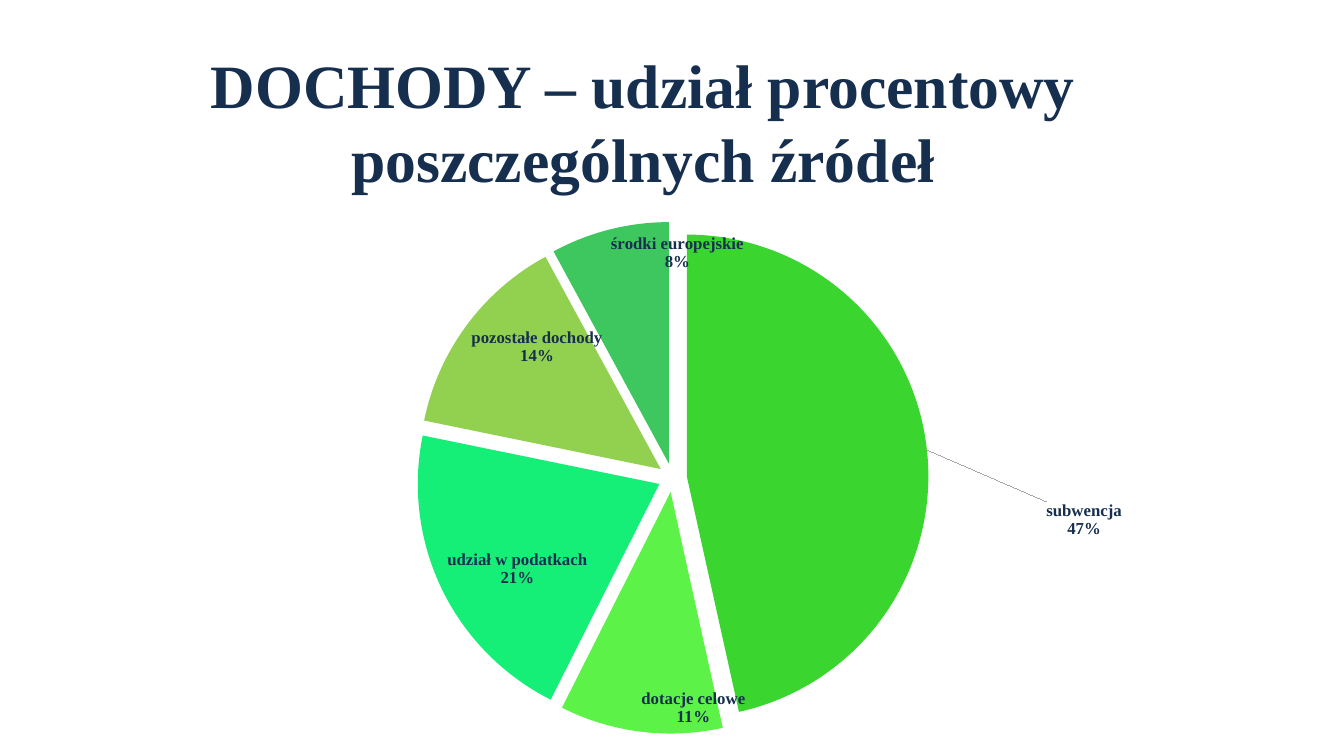
from copy import deepcopy
from dataclasses import dataclass

from lxml.etree import SubElement
from pptx import Presentation
from pptx.chart.data import CategoryChartData
from pptx.dml.color import RGBColor
from pptx.enum.chart import XL_CHART_TYPE as ChartType, XL_LABEL_POSITION as LabelPos
from pptx.enum.text import MSO_ANCHOR as Anchor, MSO_AUTO_SIZE as AutoSize, PP_ALIGN as Align
from pptx.oxml.ns import qn
from pptx.util import Inches, Pt

INCOME = [
    ("subwencja", 47, "3BD52F"),
    ("dotacje celowe", 11, "5CF248"),
    ("udział w podatkach", 21, "15EF78"),
    ("pozostałe dochody", 14, "92D050"),
    ("środki europejskie", 8, "3DC75E"),
]
# Category index: label shift as shares of the chart's size
LABEL_SHIFTS = {0: (0.22, 0.1)}


@dataclass(frozen=True)
class Theme:
    ink: str = "162F4E"
    leader: str = "A6A6A6"
    font: str = "Times New Roman"
    chart_font: str = "Calibri"
    title_size: int = 44
    label_size: int = 12
    chart_size: int = 10


def add_layout(parent, **values):
    """Append a manual chart layout holding the given settings."""
    manual = SubElement(SubElement(parent, qn("c:layout")), qn("c:manualLayout"))
    for name, value in values.items():
        SubElement(manual, qn(f"c:{name}")).set("val", str(value))
    return manual.getparent()


class SlideBuilder:
    def __init__(self, prs, theme):
        self.prs, self.theme = prs, theme
        self.s = prs.slides.add_slide(prs.slide_layouts[5])

    def box(self, left, top, width, height):
        """Turn percentages of the slide's size into lengths."""
        w, h = self.prs.slide_width, self.prs.slide_height
        return [int(share * size / 100)
                for share, size in zip((left, top, width, height), (w, h, w, h))]

    def style(self, font, size):
        font.name, font.size, font.bold = self.theme.font, Pt(size), True
        font.color.rgb = RGBColor.from_string(self.theme.ink)

    def title(self, text, *area):
        sp = self.s.shapes.title
        sp.left, sp.top, sp.width, sp.height = self.box(*area)
        tf = sp.text_frame
        tf.text = text
        tf.word_wrap, tf.auto_size = True, AutoSize.NONE
        tf.vertical_anchor = Anchor.TOP
        p = tf.paragraphs[0]
        p.alignment, p.line_spacing, p.space_after = Align.CENTER, 1.0, Pt(6)
        self.style(p.font, self.theme.title_size)

    def pie(self, rows, shifts, explosion, *area):
        names, values, colors = zip(*rows)
        data = CategoryChartData()
        data.categories = names
        data.add_series("Series 1", values)
        chart = self.s.shapes.add_chart(ChartType.PIE, *self.box(*area), data).chart
        chart.has_legend = chart.has_title = False
        chart.font.name = self.theme.chart_font
        chart.font.size = Pt(self.theme.chart_size)
        plot = chart.plots[0]
        plot.vary_by_categories = True
        self.fill_plot_area(chart)

        series = plot.series[0]
        burst = SubElement(series._element, qn("c:explosion"))
        burst.set("val", str(explosion))
        series._element.find(qn("c:tx")).addnext(burst)
        for i, color in enumerate(colors):
            fill = series.points[i].format.fill
            fill.solid()
            fill.fore_color.rgb = RGBColor.from_string(color)
        self.pie_labels(series.data_labels, shifts)

    def fill_plot_area(self, chart):
        plot_area = chart._chartSpace.chart.plotArea
        for old in plot_area.findall(qn("c:layout")):
            plot_area.remove(old)
        plot_area.insert(0, add_layout(
            plot_area, layoutTarget="inner", xMode="edge", yMode="edge",
            x=0.01, y=0, w=0.98, h=1))

    def pie_labels(self, labels, shifts):
        """Show category over percentage, moving the labels listed in shifts."""
        self.style(labels.font, self.theme.label_size)
        labels.number_format, labels.number_format_is_linked = "0%", False
        labels.position = LabelPos.INSIDE_END
        labels.show_category_name = labels.show_percentage = True
        labels.show_value = False
        root = labels._element
        for old in root.findall(qn("c:showLeaderLines")):
            root.remove(old)
        SubElement(root, qn("c:separator")).text = "\n"
        shared = list(root)
        for place, (i, (x, y)) in enumerate(shifts.items()):
            label = SubElement(root, qn("c:dLbl"))
            SubElement(label, qn("c:idx")).set("val", str(i))
            add_layout(label, x=x, y=y)
            label.extend(deepcopy(item) for item in shared)
            root.insert(place, label)
        SubElement(root, qn("c:showLeaderLines")).set("val", "1")
        node = root
        for tag in ("c:leaderLines", "c:spPr", "a:ln", "a:solidFill", "a:srgbClr"):
            node = SubElement(node, qn(tag))
        node.set("val", self.theme.leader)


def main():
    prs = Presentation()
    prs.slide_width, prs.slide_height = Inches(13.33), Inches(7.5)
    slide = SlideBuilder(prs, Theme())
    slide.title("DOCHODY – udział procentowy poszczególnych źródeł",
                14.1, 5.6, 67.52, 12.8)
    slide.pie(INCOME, LABEL_SHIFTS, 6, 16.05, 29.33, 67.97, 67.73)
    prs.save("out.pptx")


if __name__ == "__main__":
    main()
